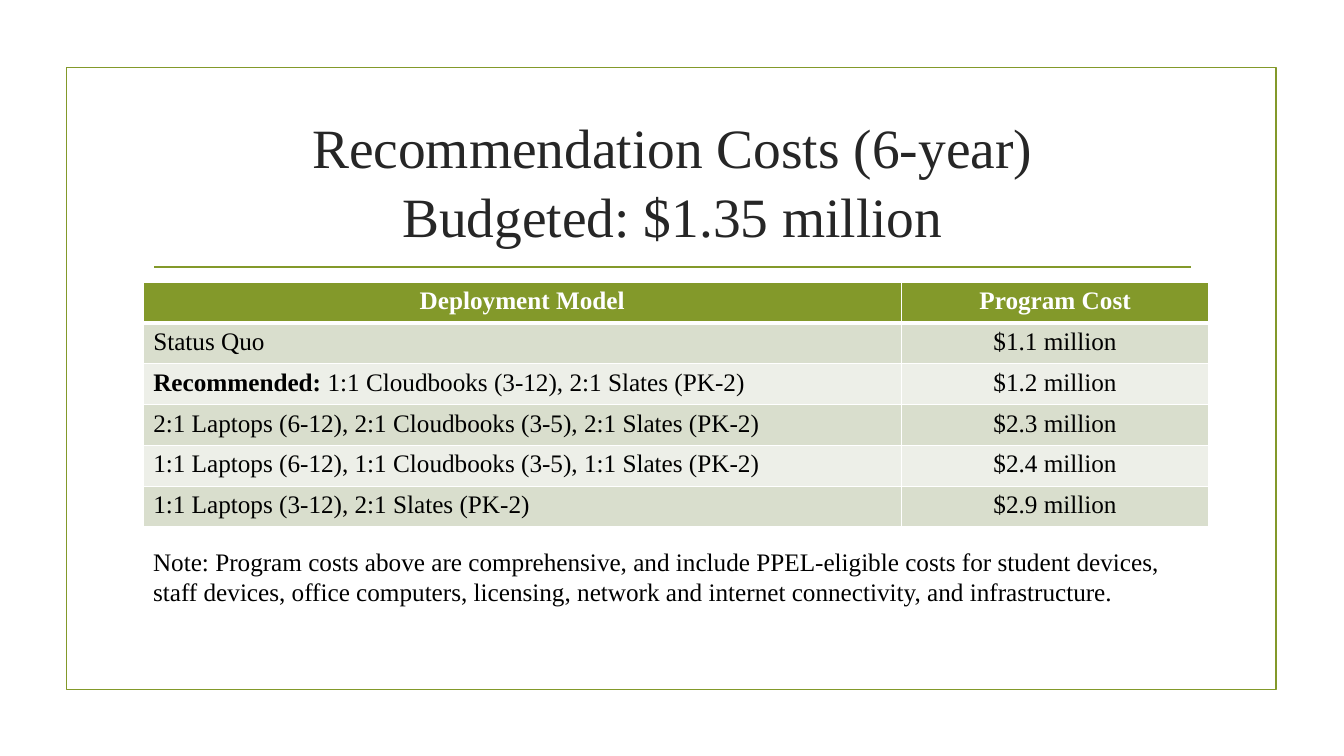
"""Build the slide comparing six-year program costs by deployment model."""
from lxml import etree
from pptx import Presentation
from pptx.dml.color import RGBColor
from pptx.enum import shapes, text
from pptx.oxml import ns
from pptx.util import Inches, Pt

OLIVE = RGBColor(0x83, 0x99, 0x2A)
SAGE = RGBColor(0xD9, 0xDE, 0xCD)
MIST = RGBColor(0xED, 0xEF, 0xE8)
CHARCOAL = RGBColor(0x26, 0x26, 0x26)
BLACK = RGBColor(0, 0, 0)
WHITE = RGBColor(0xFF, 0xFF, 0xFF)
CENTER = text.PP_ALIGN.CENTER


def add_run(paragraph, words, size, color, bold=False):
    run = paragraph.add_run()
    run.text = words
    run.font.name = "Times New Roman"
    run.font.size = Pt(size)
    run.font.bold = bold
    run.font.color.rgb = color


def add_border(cell, side, width):
    props = cell._tc.get_or_add_tcPr()
    line = etree.Element(ns.qn(f"a:ln{side}"), w=str(Pt(width)))
    fill = etree.SubElement(line, ns.qn("a:solidFill"))
    etree.SubElement(fill, ns.qn("a:srgbClr"), val=str(WHITE))
    props.insert("LRTB".index(side), line)


deck = Presentation()
deck.slide_width, deck.slide_height = Inches(13.33), Inches(7.5)
slide = deck.slides.add_slide(deck.slide_layouts[6])

frame = slide.shapes.add_shape(
    shapes.MSO_SHAPE.RECTANGLE, Inches(0.66), Inches(0.67), Inches(12), Inches(6.17))
frame.shadow.inherit = False
frame.fill.background()
rule = slide.shapes.add_connector(
    shapes.MSO_CONNECTOR.STRAIGHT, Inches(1.53), Inches(2.65), Inches(11.81), Inches(2.65))
etree.SubElement(rule._element.spPr, ns.qn("a:effectLst"))
for outlined in (frame, rule):
    outlined.line.color.rgb = OLIVE
    outlined.line.width = Pt(1.25)

title = slide.shapes.add_textbox(Inches(1.42), Inches(1.07), Inches(10.5), Inches(1.43)).text_frame
title.word_wrap = True
title.vertical_anchor = text.MSO_ANCHOR.MIDDLE
heading = title.paragraphs[0]
heading.alignment = CENTER
heading.line_spacing = 1.04
add_run(heading, "Recommendation Costs (6-year)", 39.6, CHARCOAL)
heading.add_line_break()
add_run(heading, "Budgeted: $1.35 million", 39.6, CHARCOAL)

cost_rows = [
    ("", "Deployment Model", "Program Cost"),
    ("", "Status Quo", "$1.1 million"),
    ("Recommended: ", "1:1 Cloudbooks (3-12), 2:1 Slates (PK-2)", "$1.2 million"),
    ("", "2:1 Laptops (6-12), 2:1 Cloudbooks (3-5), 2:1 Slates (PK-2)", "$2.3 million"),
    ("", "1:1 Laptops (6-12), 1:1 Cloudbooks (3-5), 1:1 Slates (PK-2)", "$2.4 million"),
    ("", "1:1 Laptops (3-12), 2:1 Slates (PK-2)", "$2.9 million"),
]
costs = slide.shapes.add_table(
    len(cost_rows), 2, Inches(1.42), Inches(2.8), Inches(10.57), Inches(2.43)).table
costs.columns[0].width, costs.columns[1].width = Inches(7.52), Inches(3.05)
for row, (label, model, cost) in enumerate(cost_rows):
    header = row == 0
    for column, words in enumerate((model, cost)):
        cell = costs.cell(row, column)
        cell.fill.solid()
        cell.fill.fore_color.rgb = OLIVE if header else SAGE if row % 2 else MIST
        for side in "LRTB":
            under_header = (row, side) in ((0, "B"), (1, "T"))
            add_border(cell, side, 3 if under_header else 1)
        entry = cell.text_frame.paragraphs[0]
        if header or column == 1:
            entry.alignment = CENTER
        if label and column == 0:
            add_run(entry, label, 18, BLACK, bold=True)
        add_run(entry, words, 18, WHITE if header else BLACK, bold=header)

note = slide.shapes.add_textbox(Inches(1.42), Inches(5.37), Inches(10.5), Inches(0.71)).text_frame
note.word_wrap = True
add_run(
    note.paragraphs[0],
    "Note: Program costs above are comprehensive, and include PPEL-eligible costs for "
    "student devices, staff devices, office computers, licensing, network and internet "
    "connectivity, and infrastructure.", 18, BLACK)

deck.save("out.pptx")
